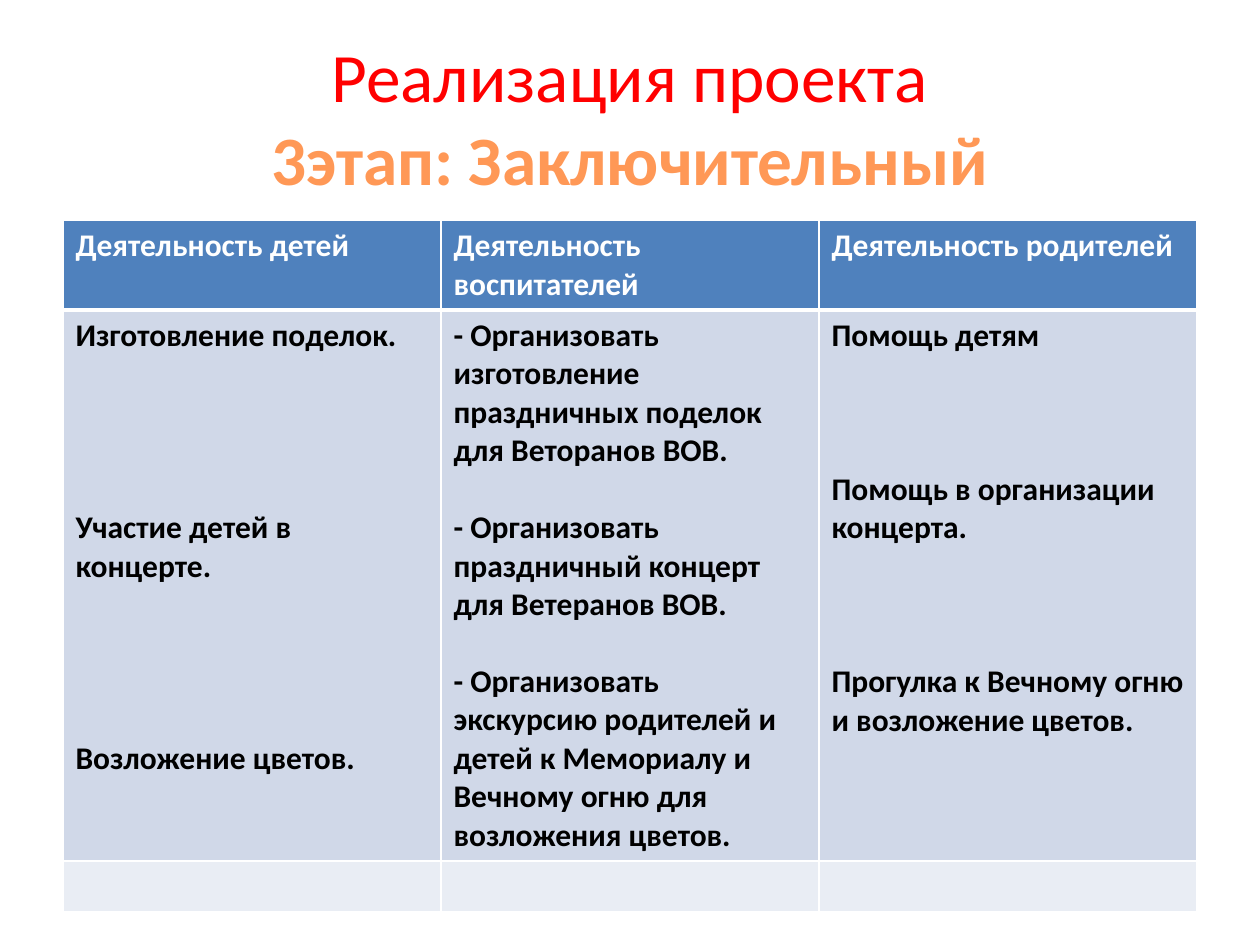
from dataclasses import dataclass

from lxml import etree
from pptx import Presentation
from pptx import util as u
from pptx.dml.color import RGBColor
from pptx.enum import text
from pptx.oxml.ns import qn


@dataclass(frozen=True)
class Theme:
    """Colours, type sizes and font of the slide."""
    font: str = "Calibri"
    red: str = "FF0000"
    orange: str = "FF9856"
    white: str = "FFFFFF"
    black: str = "000000"
    head: str = "4F81BD"
    band: str = "D0D8E8"
    pale: str = "E9EDF4"
    title: float = 39.6
    body: float = 18
    line: float = 22


T = Theme()
WIDE, HIGH = u.Inches(10), u.Inches(7.5)
LEFT, SPAN = 0.05, 0.9
ROWS = (0.7, 4.37, 0.4)
HEADS = ("Деятельность детей", "Деятельность воспитателей", "Деятельность родителей")
TASKS = (
    ((0, "Изготовление поделок."),
     (4, "Участие детей в концерте."),
     (4, "Возложение цветов.")),
    ((0, "- Организовать изготовление праздничных поделок для Веторанов ВОВ."),
     (1, "- Организовать праздничный концерт для Ветеранов ВОВ."),
     (1, "- Организовать экскурсию родителей и детей к Мемориалу и Вечному огню "
         "для возложения цветов.")),
    ((0, "Помощь детям"),
     (3, "Помощь в организации концерта."),
     (3, "Прогулка к Вечному огню и возложение цветов.")),
)


def style(font, size, color, bold):
    """Format a font."""
    for key, val in {"name": T.font, "size": u.Pt(size), "bold": bold}.items():
        setattr(font, key, val)
    font.color.rgb = RGBColor.from_string(color)


def add_title(slide):
    """Place the two-line title."""
    box = slide.shapes.title
    place = {"left": LEFT * WIDE, "top": 0.04 * HIGH,
             "width": SPAN * WIDE, "height": HIGH / 6}
    for key, val in place.items():
        setattr(box, key, int(val))
    frame = box.text_frame
    look = {"word_wrap": True, "auto_size": text.MSO_AUTO_SIZE.NONE,
            "vertical_anchor": text.MSO_ANCHOR.MIDDLE}
    for key, val in look.items():
        setattr(frame, key, val)
    para = frame.paragraphs[0]
    para.alignment = text.PP_ALIGN.CENTER
    run = para.add_run()
    run.text = "Реализация проекта"
    style(run.font, T.title, T.red, False)
    para.add_line_break()
    run = para.add_run()
    run.text = "3этап: Заключительный"
    style(run.font, T.title, T.orange, True)


def edge(cell, row):
    """Draw white cell borders, thick under the header."""
    props = cell._tc.get_or_add_tcPr()
    thick = {(0, "B"), (1, "T")}
    for side in "LRTB":
        size = u.Pt(3 if (row, side) in thick else 1)
        line = etree.SubElement(props, qn(f"a:ln{side}"), w=str(size))
        fill = etree.SubElement(line, qn("a:solidFill"))
        etree.SubElement(fill, qn("a:srgbClr"), val=T.white)


def write(cell, items, color):
    """Write paragraphs, each after a gap counted in lines."""
    frame = cell.text_frame
    for num, (gap, words) in enumerate(items):
        para = frame.add_paragraph() if num else frame.paragraphs[0]
        if gap:
            para.space_before = u.Pt(gap * T.line)
        run = para.add_run()
        run.text = words
        style(run.font, T.body, color, True)


def add_grid(slide):
    """Build the table of activities."""
    cells = (
        (T.head, T.white, [[(0, head)] for head in HEADS]),
        (T.band, T.black, TASKS),
        (T.pale, T.black, [()] * len(HEADS)),
    )
    grid = slide.shapes.add_table(
        len(ROWS), len(HEADS), int(LEFT * WIDE), u.Inches(1.75),
        int(SPAN * WIDE), u.Inches(sum(ROWS))).table
    for row, (fill, color, texts) in enumerate(cells):
        grid.rows[row].height = u.Inches(ROWS[row])
        for col, items in enumerate(texts):
            cell = grid.cell(row, col)
            edge(cell, row)
            cell.fill.solid()
            cell.fill.fore_color.rgb = RGBColor.from_string(fill)
            write(cell, items, color)


def main():
    """Build and save the slide."""
    deck = Presentation()
    deck.slide_width, deck.slide_height = WIDE, HIGH
    slide = deck.slides.add_slide(deck.slide_layouts[5])
    add_title(slide)
    add_grid(slide)
    deck.save("out.pptx")


if __name__ == "__main__":
    main()
